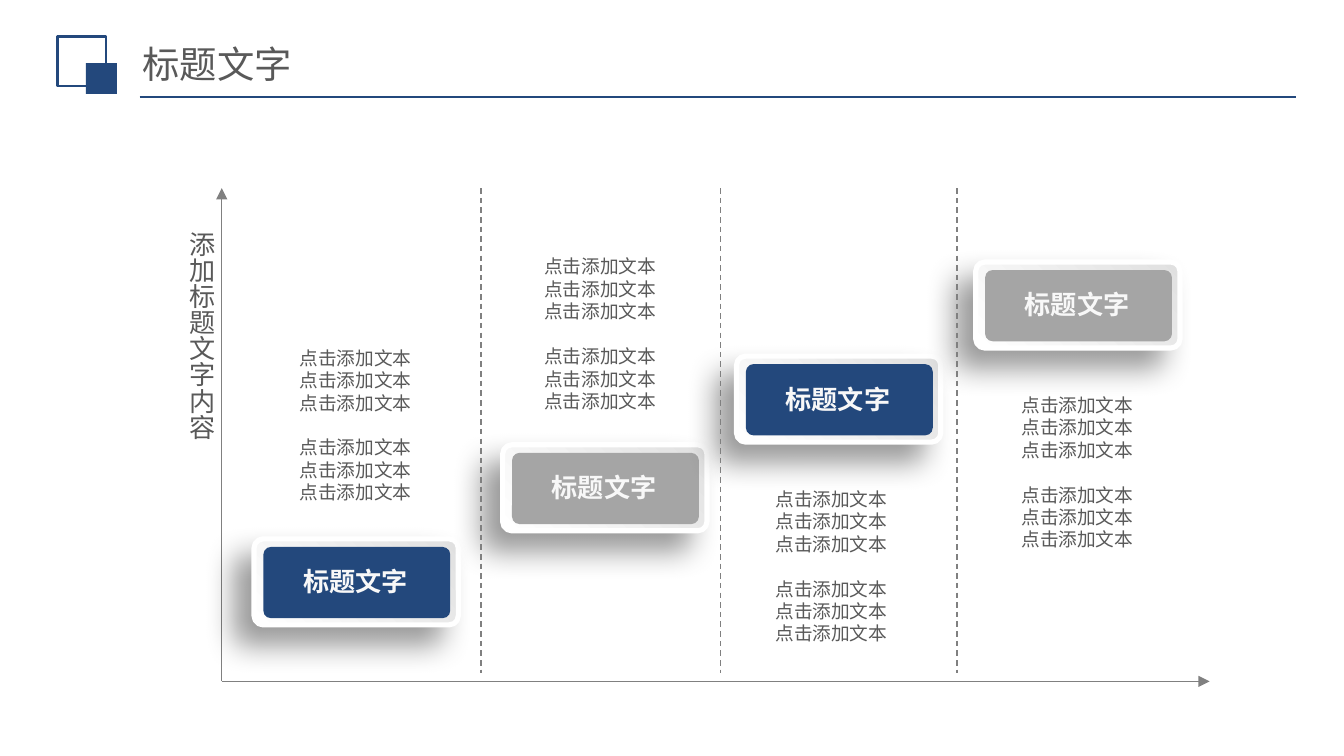
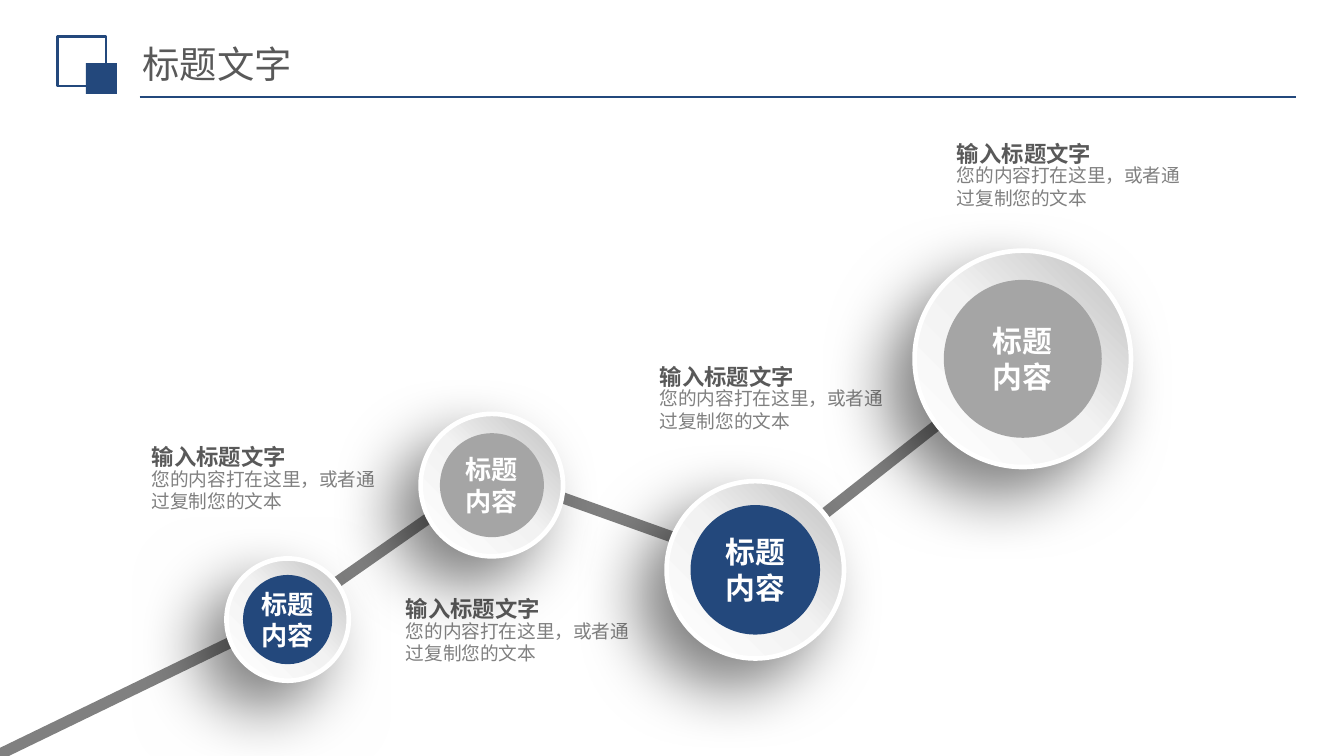
from dataclasses import dataclass

from lxml.etree import SubElement
from pptx import Presentation
from pptx.dml.color import RGBColor
from pptx.enum.dml import MSO_LINE_DASH_STYLE as DASH
from pptx.enum.shapes import MSO_CONNECTOR, MSO_SHAPE
from pptx.enum.text import MSO_ANCHOR as ANCHOR, PP_ALIGN as ALIGN
from pptx.oxml.ns import qn
from pptx.util import Inches, Pt


@dataclass(frozen=True)
class Theme:
    blue: str = "23487C"
    gray: str = "A5A5A5"
    rule: str = "808080"
    dark: str = "595959"
    pale: str = "F8F8F8"
    white: str = "FFFFFF"
    shadow: str = "000000"
    card_stops: tuple = ((0, "E0E0E0"), (100, "FFFFFF"))
    ring_stops: tuple = ((0, "FFFFFF"), (50, "F2F2F2"), (100, "BFBFBF"))
    title_font: str = "Noto Sans CJK SC"
    label_font: str = "Arial"
    caption_font: str = "DejaVu Sans"
    title_size: int = 20
    large_size: int = 16
    label_size: int = 14
    heading_size: int = 12
    body_size: int = 10


T = Theme()
TEXT_INSETS = (0.1, 0.05, 0.1, 0.05)
VERTICAL_INSETS = (0.05, 0.1, 0.05, 0.1)
CAPTION_INSETS = (0.15, 0, 0.15, 0)


def rgb(value):
    return RGBColor.from_string(value)


def box(left, top, width, height):
    return [Inches(v) for v in (left, top, width, height)]


def write(s, paragraphs, size, color, font, bold=False, align=ALIGN.LEFT,
          anchor=ANCHOR.TOP, insets=TEXT_INSETS, wrap=True, gap=0, spacing=None):
    """Fill a shape with paragraphs of one format; gap is the space between them."""
    tf = s.text_frame
    left, top, right, bottom = [Inches(v) for v in insets]
    frame = {"word_wrap": wrap, "vertical_anchor": anchor, "margin_left": left,
             "margin_top": top, "margin_right": right, "margin_bottom": bottom}
    for name, value in frame.items():
        setattr(tf, name, value)
    for i, text in enumerate(paragraphs):
        p = tf.paragraphs[0] if i == 0 else tf.add_paragraph()
        p.text = text
        p.alignment = align
        if spacing:
            p.line_spacing = spacing
        if i and gap:
            p.space_before = Pt(gap)
        for r in p.runs:
            for name, value in {"size": Pt(size), "bold": bold, "name": font}.items():
                setattr(r.font, name, value)
            r.font.color.rgb = rgb(color)
            SubElement(r.font._element, qn("a:ea"), typeface=font)


def add_text(shapes, at, paragraphs, size, color, font, **options):
    s = shapes.add_textbox(*box(*at))
    write(s, paragraphs, size, color, font, **options)
    return s


def add_shape(shapes, kind, at, fill=None, line=None, width=0, adjust=None):
    s = shapes.add_shape(kind, *box(*at))
    s.shadow.inherit = False
    if fill:
        s.fill.solid()
        s.fill.fore_color.rgb = rgb(fill)
    else:
        s.fill.background()
    if line:
        s.line.color.rgb = rgb(line)
        s.line.width = Pt(width)
    else:
        s.line.fill.background()
    if adjust is not None:
        s.adjustments[0] = adjust
    return s


def add_line(shapes, start, end, color, width, dash=None, arrow=False):
    s = shapes.add_connector(MSO_CONNECTOR.STRAIGHT, *box(*start, *end))
    s.line.color.rgb = rgb(color)
    s.line.width = Pt(width)
    if dash:
        s.line.dash_style = dash
    if arrow:
        SubElement(s.line._get_or_add_ln(), qn("a:tailEnd"), type="triangle")
    SubElement(s._element.spPr, qn("a:effectLst"))


def set_gradient(s, stops, angle):
    """Apply percent/colour stops at a clockwise angle."""
    s.fill.gradient()
    s.fill.gradient_angle = 360 - angle
    stop_list = s._element.spPr.find(qn("a:gradFill")).find(qn("a:gsLst"))
    for old in list(stop_list):
        stop_list.remove(old)
    for position, color in stops:
        stop = SubElement(stop_list, qn("a:gs"), pos=str(position * 1000))
        SubElement(stop, qn("a:srgbClr"), val=color)


def set_shadow(s, opacity, blur, distance):
    """Cast a shadow to the lower left; opacity in percent, lengths in points."""
    effects = s._element.spPr.find(qn("a:effectLst"))
    shadow = SubElement(effects, qn("a:outerShdw"), blurRad=str(Pt(blur)),
                        dist=str(Pt(distance)), dir=str(135 * 60000),
                        algn="tr", rotWithShape="0")
    color = SubElement(shadow, qn("a:srgbClr"), val=T.shadow)
    SubElement(color, qn("a:alpha"), val=str(opacity * 1000))


def add_titled_slide(prs, title):
    shapes = prs.slides.add_slide(prs.slide_layouts[6]).shapes
    add_line(shapes, (1.04, 0.72), (9.64, 0.72), T.blue, 1.25)
    squares = shapes.add_group_shape().shapes
    add_shape(squares, MSO_SHAPE.RECTANGLE, (0.43, 0.27, 0.36, 0.37),
              line=T.blue, width=1.5)
    add_shape(squares, MSO_SHAPE.RECTANGLE, (0.64, 0.47, 0.23, 0.23), T.blue)
    add_text(shapes, (0.99, 0.29, 6.45, 0.36), [title], T.title_size, T.dark,
             T.title_font, anchor=ANCHOR.MIDDLE, insets=(0.07, 0.04, 0.07, 0.04))
    return shapes


def add_card(shapes, left, top, color):
    group = shapes.add_group_shape().shapes
    frame = add_shape(group, MSO_SHAPE.ROUNDED_RECTANGLE, (left, top, 1.52, 0.64),
                      line=T.white, width=2.75, adjust=0.106)
    set_gradient(frame, T.card_stops, 135)
    set_shadow(frame, 40, 16, 14)
    add_shape(group, MSO_SHAPE.ROUNDED_RECTANGLE,
              (left + 0.07, top + 0.06, 1.39, 0.53), color, adjust=0.106)
    add_text(group, (left + 0.16, top + 0.15, 1.19, 0.35), ["标题文字"],
             T.label_size, T.pale, T.label_font, bold=True, align=ALIGN.CENTER)


def add_disc(shapes, x, y, diameter, color, size):
    """Draw a ringed disc centred on x, y."""
    group = shapes.add_group_shape().shapes

    def circle(d, **options):
        return add_shape(group, MSO_SHAPE.OVAL, (x - d / 2, y - d / 2, d, d), **options)

    ring = circle(diameter, line=T.white, width=2.5)
    set_gradient(ring, T.ring_stops, 315)
    set_shadow(ring, 50, 35, 20)
    core = circle(diameter * 0.73, fill=color)
    write(core, ["标题", "内容"], size, T.white, T.label_font, bold=True,
          align=ALIGN.CENTER, anchor=ANCHOR.MIDDLE, insets=(0, 0.04, 0, 0.04),
          wrap=False)


def add_caption(shapes, left, top):
    add_text(shapes, (left, top + 0.22, 1.97, 0.43),
             ["您的内容打在这里，或者通过复制您的文本"], T.body_size, T.rule,
             T.caption_font, insets=CAPTION_INSETS)
    add_text(shapes, (left, top, 1.97, 0.24), ["输入标题文字"], T.heading_size,
             T.dark, T.caption_font, bold=True, insets=CAPTION_INSETS, spacing=1.2)


def build_steps_slide(prs):
    shapes = add_titled_slide(prs, "标题文字")
    origin = (1.65, 5.07)
    for end in ((1.65, 1.4), (9, 5.07)):
        add_line(shapes, origin, end, T.rule, 0.75, arrow=True)
    steps = (  # card left, card top, colour, text left, text top
        (1.89, 4.01, T.blue, 2.0, 2.53),
        (3.74, 3.31, T.gray, 3.82, 1.85),
        (5.48, 2.65, T.blue, 5.54, 3.58),
        (7.26, 1.95, T.gray, 7.37, 2.88),
    )
    block = "\v".join(["点击添加文本"] * 3)
    for left, top, color, text_left, text_top in steps:
        add_card(shapes, left, top, color)
        add_text(shapes, (text_left, text_top, 1.29, 1.28), [block, block],
                 T.body_size, T.dark, T.label_font, align=ALIGN.CENTER, gap=12)
    for x in (3.58, 5.36, 7.12):
        add_line(shapes, (x, 1.4), (x, 5.01), T.rule, 0.75, dash=DASH.DASH)
    axis_label = add_text(shapes, (1.23, 1.62, 0.44, 2.03), ["添加标题文字内容"],
                          T.label_size, T.dark, T.label_font, insets=VERTICAL_INSETS)
    axis_label.text_frame._txBody.bodyPr.set("vert", "eaVert")


def build_path_slide(prs):
    shapes = add_titled_slide(prs, "标题文字")
    discs = (  # centre x, centre y, diameter, colour, type size
        (2.14, 4.61, 0.91, T.blue, T.label_size),
        (3.66, 3.61, 1.06, T.gray, T.label_size),
        (5.62, 4.24, 1.32, T.blue, T.large_size),
        (7.61, 2.67, 1.61, T.gray, T.large_size),
    )
    stops = [(-0.04, 5.63), (2.21, 4.54), (3.67, 3.52), (5.63, 4.22), (7.61, 2.66)]
    for start, end in zip(stops, stops[1:]):
        add_line(shapes, start, end, T.rule, 6)
    for left, top in ((0.98, 3.26), (2.87, 4.39), (4.76, 2.66), (6.97, 1.0)):
        add_caption(shapes, left, top)
    for disc in discs:
        add_disc(shapes, *disc)


def main():
    prs = Presentation()
    prs.slide_width = Inches(10)
    prs.slide_height = prs.slide_width * 9 // 16
    build_steps_slide(prs)
    build_path_slide(prs)
    prs.save("out.pptx")


if __name__ == "__main__":
    main()
